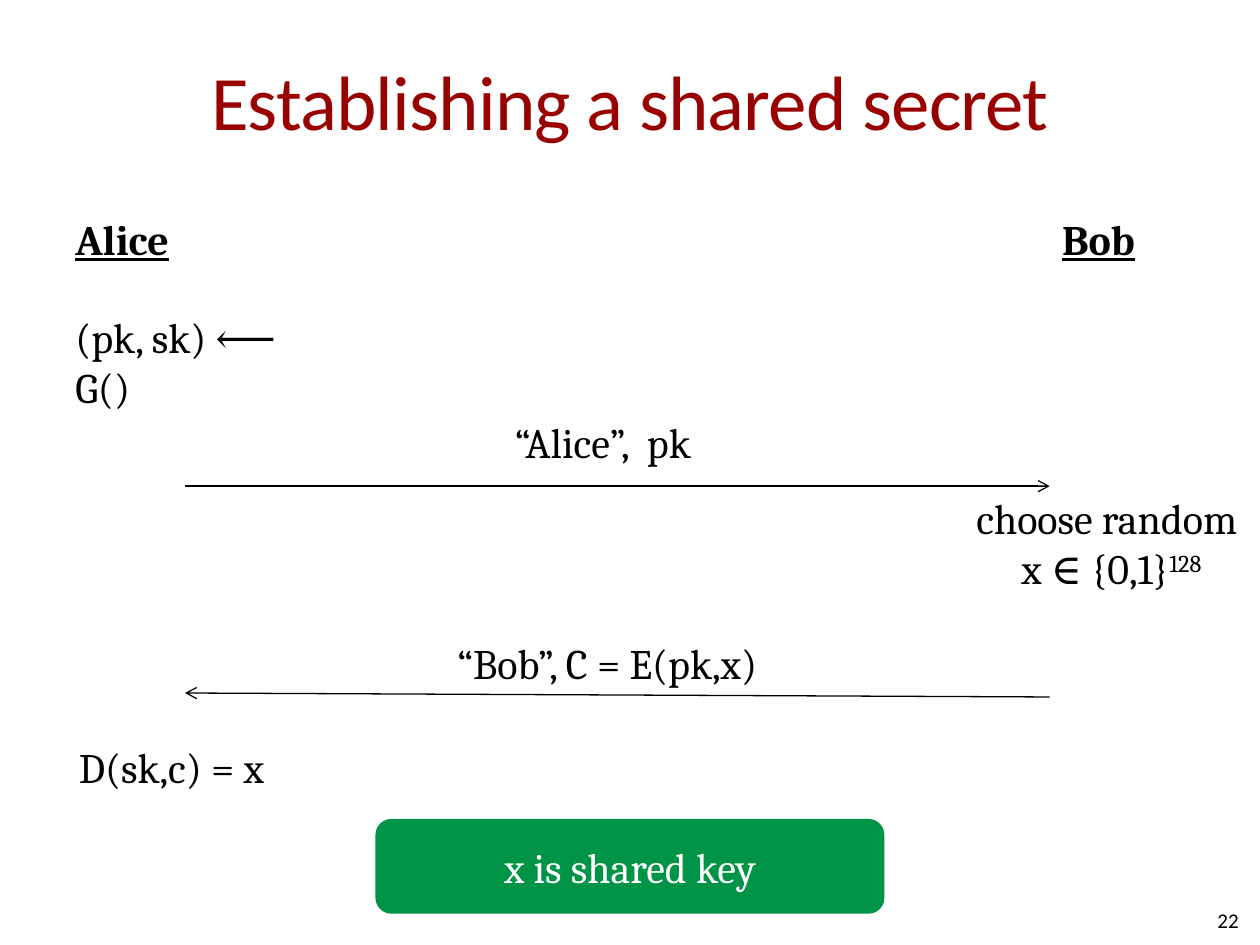
from lxml.etree import SubElement
from pptx import Presentation
from pptx.dml.color import RGBColor
from pptx.enum.shapes import MSO_CONNECTOR, MSO_SHAPE
from pptx.enum.text import MSO_ANCHOR, MSO_AUTO_SIZE, PP_ALIGN
from pptx.oxml.ns import qn
from pptx.util import Cm, Pt

RED = RGBColor(0x99, 0x00, 0x00)
GREEN = RGBColor(0x00, 0x94, 0x46)
BLACK = RGBColor(0x00, 0x00, 0x00)
WHITE = RGBColor(0xFF, 0xFF, 0xFF)
LEFT, MID, RIGHT = PP_ALIGN.LEFT, PP_ALIGN.CENTER, PP_ALIGN.RIGHT
INSET = (0.25, 0.13)
FLUSH = (0, 0)

# Content: lengths in cm, lines as lists of runs, "^" marks a superscript
TITLE = "Establishing a shared secret"
KEY = "x is shared key"
PAGE = "22"
EDGE = 1.27  # left margin
ALICE, BOB = 3.73, 21.16  # ends of the message arrows

NAMES = [("Alice", EDGE, 2.46), ("Bob", BOB, 2.06)]
STEPS = [  # lines, box, alignment, insets, wrap
    ([["(pk, sk) ⟵ G()"]], (EDGE, 6.15, 5.82, 1.27), LEFT, INSET, True),
    ([["“Alice”,  pk"]], (10.13, 8.26, 4.42, 1.27), LEFT, INSET, False),
    ([["choose random "], ["x ∈ {0,1}", "^128"]],
     (19.33, 9.8, 6.15, 2.31), MID, INSET, False),
    ([["“Bob”, C = E(pk,x)"]], (9.22, 12.85, 6.43, 1.02), LEFT, FLUSH, False),
    ([["D(sk,c) = x"]], (EDGE, 14.81, 4.37, 1.27), MID, INSET, False),
]
ARROWS = [(ALICE, 9.8, BOB, 9.8), (BOB, 14.05, ALICE, 13.97)]

deck = Presentation()
deck.slide_width, deck.slide_height = Cm(25.4), Cm(19.05)
slide = deck.slides.add_slide(deck.slide_layouts[6])
shapes = slide.shapes


def write(shape, lines, size=24, face="Cambria", color=BLACK, align=LEFT,
          inset=FLUSH, wrap=True, anchor=MSO_ANCHOR.TOP, head=False, space=0):
    frame = shape.text_frame
    frame.word_wrap = wrap
    frame.vertical_anchor = anchor
    frame.margin_left = frame.margin_right = Cm(inset[0])
    frame.margin_top = frame.margin_bottom = Cm(inset[1])
    for i, line in enumerate(lines):
        para = frame.add_paragraph() if i else frame.paragraphs[0]
        para.alignment = align
        for text in line:
            run = para.add_run()
            run.text = text.lstrip("^")
            font = run.font
            font.size, font.name = Pt(size), face
            font.color.rgb = color
            if head:
                font.bold = font.underline = True
            props = run._r.get_or_add_rPr()
            if text.startswith("^"):
                props.set("baseline", "30000")
            if space:
                props.set("spc", str(space))
    return frame


def label(lines, box, **style):
    return write(shapes.add_textbox(*map(Cm, box)), lines, **style)


def arrow(ends):
    line = shapes.add_connector(MSO_CONNECTOR.STRAIGHT, *map(Cm, ends))
    line.line.color.rgb = BLACK
    line.line.width = Pt(0.75)
    SubElement(line.line._get_or_add_ln(), qn("a:tailEnd"), type="arrow")
    SubElement(line._element.spPr, qn("a:effectLst"))


# Title
label([[TITLE]], (EDGE, 0.43, 22.86, 3.18), size=44, face="Calibri", color=RED,
      align=MID, inset=(0, 0.13), anchor=MSO_ANCHOR.MIDDLE, space=-50)

# The two parties
for name, left, width in NAMES:
    frame = label([[name]], (left, 4.17, width, 1.27), inset=INSET, wrap=False,
                  head=True)
    frame.auto_size = MSO_AUTO_SIZE.SHAPE_TO_FIT_TEXT

# Messages and local steps
for ends in ARROWS:
    arrow(ends)
for lines, box, align, inset, wrap in STEPS:
    frame = label(lines, box, align=align, inset=inset, wrap=wrap)
    frame.auto_size = MSO_AUTO_SIZE.SHAPE_TO_FIT_TEXT

# Result
badge = shapes.add_shape(MSO_SHAPE.ROUNDED_RECTANGLE,
                         *map(Cm, (7.57, 16.51, 10.26, 1.91)))
badge.shadow.inherit = False
badge.fill.solid()
badge.fill.fore_color.rgb = GREEN
badge.line.fill.background()
write(badge, [[KEY]], color=WHITE, align=MID, anchor=MSO_ANCHOR.MIDDLE)

# Page number
label([[PAGE]], (19.05, 18.03, 5.92, 1.02), size=12, face="Calibri",
      align=RIGHT, anchor=MSO_ANCHOR.MIDDLE)

deck.save("out.pptx")
